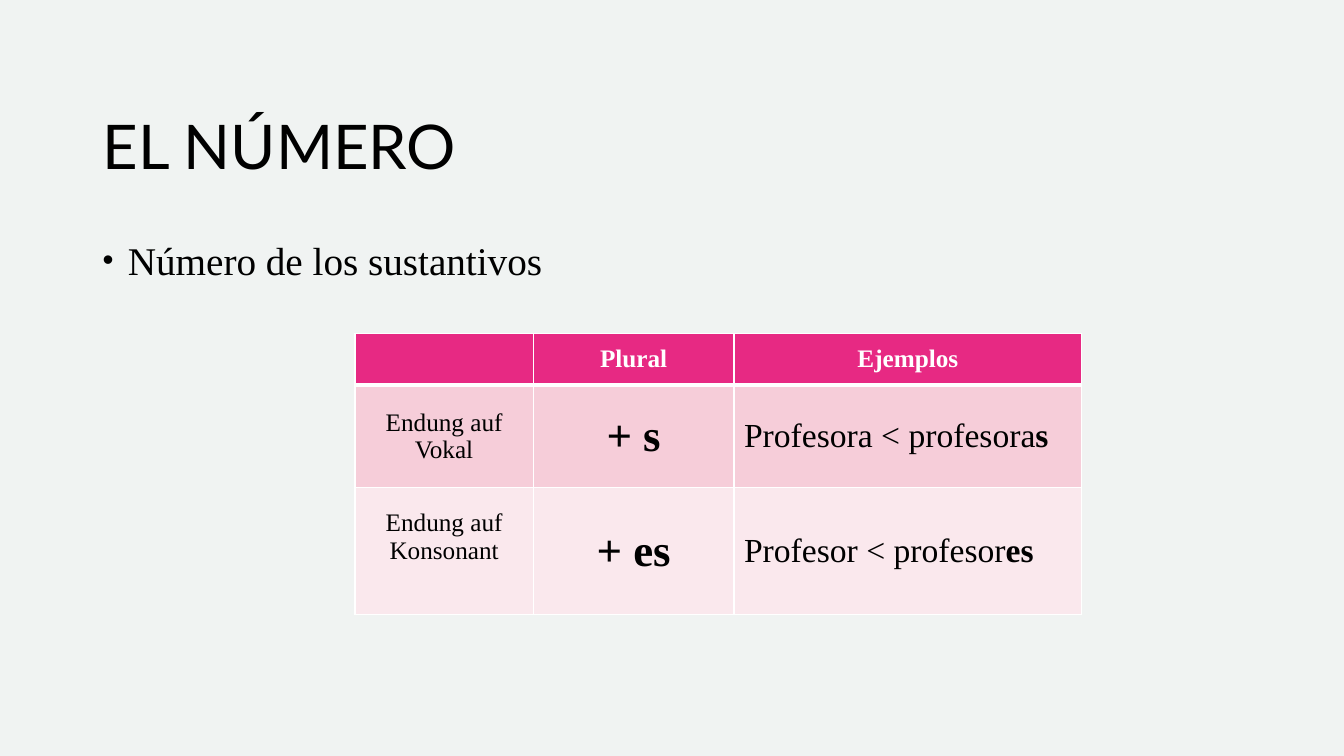
from lxml.etree import SubElement
from pptx import Presentation
from pptx.dml.color import RGBColor
from pptx.enum.text import MSO_ANCHOR as Anchor, PP_ALIGN as Align
from pptx.oxml.ns import qn
from pptx.util import Inches, Pt

SERIF = "Times New Roman"
BLACK, WHITE = "000000", "FFFFFF"
COLUMN_WIDTHS = (1.77, 1.99, 3.45)
ROW_HEIGHTS = (0.51, 1.02, 1.26)
ROW_FILLS = ("E72983", "F6CDD9", "FAE8ED")

HEADER = {"size": Pt(18), "bold": True}
ENDING = {"size": Pt(18), "bold": False}
SUFFIX = {"size": Pt(32), "bold": True}
EXAMPLE = {"size": Pt(24), "bold": False}
EXAMPLE_END = {"size": Pt(24), "bold": True}

# Each cell is a list of (text, format) runs.
CELLS = (
    ([], [("Plural", HEADER)], [("Ejemplos", HEADER)]),
    ([("Endung auf Vokal", ENDING)], [("+ s", SUFFIX)],
     [("Profesora < profesora", EXAMPLE), ("s", EXAMPLE_END)]),
    ([("Endung auf Konsonant", ENDING)], [("+ es", SUFFIX)],
     [("Profesor < profesor", EXAMPLE), ("es", EXAMPLE_END)]),
)


def paint(color_format, color):
    color_format.rgb = RGBColor.from_string(color)


def add_run(para, text, color, values):
    span = para.add_run()
    span.text = text
    for name, value in values.items():
        setattr(span.font, name, value)
    paint(span.font.color, color)


def add_text(page, place, text, anchor, values, paragraph_values):
    frame = page.shapes.add_textbox(*map(Inches, place)).text_frame
    frame.word_wrap = True
    frame.vertical_anchor = anchor
    para = frame.paragraphs[0]
    for name, value in paragraph_values.items():
        setattr(para, name, value)
    add_run(para, text, BLACK, values)
    return para


def add_bullet(para):
    properties = para._p.get_or_add_pPr()
    properties.set("marL", str(Inches(0.25)))
    properties.set("indent", str(Inches(-0.25)))
    SubElement(properties, qn("a:buSzPct"), val="80000")
    SubElement(properties, qn("a:buFont"), typeface="Arial")
    SubElement(properties, qn("a:buChar"), char="•")


def add_border(cell, side, width):
    """Draw one white border; call it before the cell gets its fill."""
    line = SubElement(cell._tc.get_or_add_tcPr(), qn(f"a:ln{side}"), w=str(Pt(width)))
    SubElement(SubElement(line, qn("a:solidFill")), qn("a:srgbClr"), val=WHITE)


def border_width(side, row):
    """The line between header and body is thicker than the others."""
    return 3 if (side, row) in (("B", 0), ("T", 1)) else 1


def fill_cell(cell, row, column, runs):
    for side in "LRTB":
        add_border(cell, side, border_width(side, row))
    cell.fill.solid()
    paint(cell.fill.fore_color, ROW_FILLS[row])
    cell.vertical_anchor = Anchor.MIDDLE
    para = cell.text_frame.paragraphs[0]
    para.alignment = Align.LEFT if row and column == 2 else Align.CENTER
    for text, values in runs:
        add_run(para, text, BLACK if row else WHITE, {"name": SERIF, **values})


def add_plural_table(page):
    place = (3.52, 3.31, sum(COLUMN_WIDTHS), sum(ROW_HEIGHTS))
    table = page.shapes.add_table(
        len(ROW_HEIGHTS), len(COLUMN_WIDTHS), *map(Inches, place)).table
    for column, width in zip(table.columns, COLUMN_WIDTHS):
        column.width = Inches(width)
    for row, height in zip(table.rows, ROW_HEIGHTS):
        row.height = Inches(height)
    for row, cells in enumerate(CELLS):
        for column, runs in enumerate(cells):
            fill_cell(table.cell(row, column), row, column, runs)
    # The last ending sits a little above the middle of its cell.
    table.cell(2, 0).margin_bottom = Inches(0.33)


def main():
    deck = Presentation()
    deck.slide_width, deck.slide_height = Inches(13.33), Inches(7.5)
    page = deck.slides.add_slide(deck.slide_layouts[6])
    page.background.fill.solid()
    paint(page.background.fill.fore_color, "F0F3F2")

    add_text(page, (0.92, 0.64, 11.5, 1.22), "EL NÚMERO", Anchor.BOTTOM,
             {"name": "Lato", "size": Pt(44)}, {"line_spacing": 0.9})
    topic = add_text(page, (0.92, 2.25, 11.5, 4.5), "Número de los sustantivos",
                     Anchor.TOP, {"name": SERIF, "size": Pt(28)},
                     {"line_spacing": 1.1, "space_before": Pt(10)})
    add_bullet(topic)
    add_plural_table(page)
    deck.save("out.pptx")


if __name__ == "__main__":
    main()
